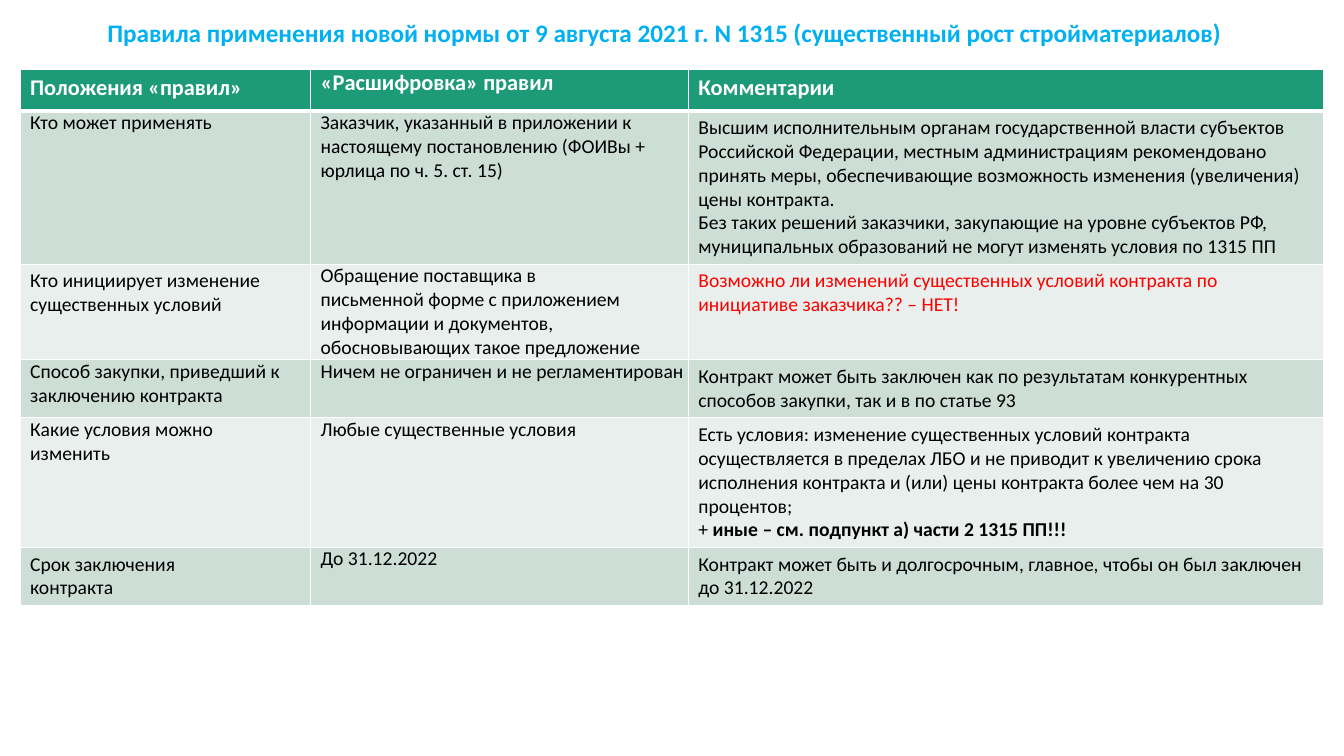
from dataclasses import dataclass

from lxml import etree
from pptx import Presentation
from pptx import util as u
from pptx.dml import color
from pptx.enum import text
from pptx.oxml import ns


@dataclass(frozen=True)
class Theme:
    """Colours, type sizes and font of the slide."""
    font: str = "Calibri"
    title: str = "00B0F0"
    header: str = "1D9A78"
    bands: tuple = ("CDDED6", "E8EFEC")
    ink: str = "000000"
    alert: str = "FF0000"
    white: str = "FFFFFF"
    title_size: int = 18
    header_size: int = 16
    body_size: int = 14


THEME = Theme()
COLUMNS = (7.32, 9.52, 16)
ROW_HEIGHT = 1.04
SIDE_INSET, TOP_INSET = 0.25, 0.13
LOWERED_FIRST_CELLS = (0, 2, 5)
HEADERS = ("Положения «правил»", "«Расшифровка» правил", "Комментарии")
RULES = (
    ("Кто может применять",
     "Заказчик, указанный в приложении к настоящему постановлению "
     "(ФОИВы + юрлица по ч. 5. ст. 15)",
     "Высшим исполнительным органам государственной власти субъектов "
     "Российской Федерации, местным администрациям рекомендовано принять "
     "меры, обеспечивающие возможность изменения (увеличения) цены контракта.\n"
     "Без таких решений заказчики, закупающие на уровне субъектов РФ, "
     "муниципальных образований не могут изменять условия по 1315 ПП"),
    ("Кто инициирует изменение существенных условий",
     "Обращение поставщика в\vписьменной форме с приложением информации "
     "и документов, обосновывающих такое предложение",
     "Возможно ли изменений существенных условий контракта по инициативе "
     "заказчика?? – НЕТ!"),
    ("Способ закупки, приведший к заключению контракта",
     "Ничем не ограничен и не регламентирован",
     "Контракт может быть заключен как по результатам конкурентных способов "
     "закупки, так и в по статье 93"),
    ("Какие условия можно\nизменить",
     "Любые существенные условия",
     "Есть условия: изменение существенных условий контракта осуществляется "
     "в пределах ЛБО и не приводит к увеличению срока исполнения контракта "
     "и (или) цены контракта более чем на 30 процентов;\n"
     "+ **иные – см. подпункт а) части 2 1315 ПП!!!"),
    ("Срок заключения\vконтракта",
     "До 31.12.2022",
     "Контракт может быть и долгосрочным, главное, чтобы он был заключен "
     "до 31.12.2022"),
)


def write(frame, content, *, size, ink, bold=False, align=None, spacing=None):
    """Write paragraphs into a frame; text after ** is bold."""
    for index, line in enumerate(content.split("\n")):
        paragraph = frame.paragraphs[0] if index == 0 else frame.add_paragraph()
        paragraph.alignment = align
        paragraph.line_spacing = spacing
        for part, words in enumerate(line.split("**")):
            for piece, chunk in enumerate(words.split("\v")):
                if piece:
                    paragraph.add_line_break()
                run = paragraph.add_run()
                run.text = chunk
                run.font.name = THEME.font
                run.font.size = u.Pt(size)
                run.font.bold = bold or part > 0
                run.font.color.rgb = color.RGBColor.from_string(ink)


class RulesSlide:
    """A title-only slide with its theme."""

    def __init__(self, presentation, theme):
        """Add the slide to the presentation."""
        self.theme = theme
        self.slide = presentation.slides.add_slide(presentation.slide_layouts[5])

    def title(self, content):
        """Place and format the title."""
        shape = self.slide.shapes.title
        shape.left, shape.top = u.Cm(0.33), u.Cm(0.33)
        shape.width, shape.height = u.Cm(32.84), u.Cm(1.07)
        frame = shape.text_frame
        frame.word_wrap = True
        frame.auto_size = text.MSO_AUTO_SIZE.NONE
        frame.vertical_anchor = text.MSO_ANCHOR.MIDDLE
        write(frame, content, size=self.theme.title_size, ink=self.theme.title,
              bold=True, align=text.PP_ALIGN.CENTER, spacing=0.9)

    def table(self, rows):
        """Add the table of rules."""
        shape = self.slide.shapes.add_table(
            len(rows), len(COLUMNS), u.Cm(0.51), u.Cm(1.75),
            u.Cm(sum(COLUMNS)), u.Cm(ROW_HEIGHT * len(rows)))
        for column, width in zip(shape.table.columns, COLUMNS):
            column.width = u.Cm(width)
        for row, contents in enumerate(rows):
            for column, content in enumerate(contents):
                self.cell(shape.table.cell(row, column), row, column, content)

    def cell(self, cell, row, column, content):
        """Format and fill one cell."""
        theme = self.theme
        header, comment = row == 0, column == 2
        lowered = comment or (column == 0 and row in LOWERED_FIRST_CELLS)
        cell.margin_left = u.Cm(SIDE_INSET)
        cell.margin_right = u.Cm(SIDE_INSET if comment else 0)
        cell.margin_top = u.Cm(TOP_INSET if lowered else 0)
        cell.margin_bottom = u.Cm(TOP_INSET if comment else 0)
        self.borders(cell, top=3 if row == 1 else 1, bottom=3 if header else 1)
        cell.fill.solid()
        fill = theme.header if header else theme.bands[(row - 1) % 2]
        cell.fill.fore_color.rgb = color.RGBColor.from_string(fill)
        ink = theme.white if header else theme.ink
        if row == 2 and comment:
            ink = theme.alert
        write(cell.text_frame, content, ink=ink, bold=header,
              size=theme.header_size if header else theme.body_size)

    def borders(self, cell, top, bottom):
        """Draw white lines around a cell."""
        properties = cell._tc.get_or_add_tcPr()
        for side, width in (("L", 1), ("R", 1), ("T", top), ("B", bottom)):
            line = etree.SubElement(properties, ns.qn(f"a:ln{side}"),
                                    w=str(u.Pt(width)))
            fill = etree.SubElement(line, ns.qn("a:solidFill"))
            etree.SubElement(fill, ns.qn("a:srgbClr"), val=self.theme.white)


def main():
    """Build and save the presentation."""
    presentation = Presentation()
    presentation.slide_width, presentation.slide_height = u.Cm(33.87), u.Cm(19.05)
    slide = RulesSlide(presentation, THEME)
    slide.title("Правила применения новой нормы от 9 августа 2021 г. N 1315 "
                "(существенный рост стройматериалов)")
    slide.table((HEADERS, *RULES))
    presentation.save("out.pptx")


if __name__ == "__main__":
    main()
